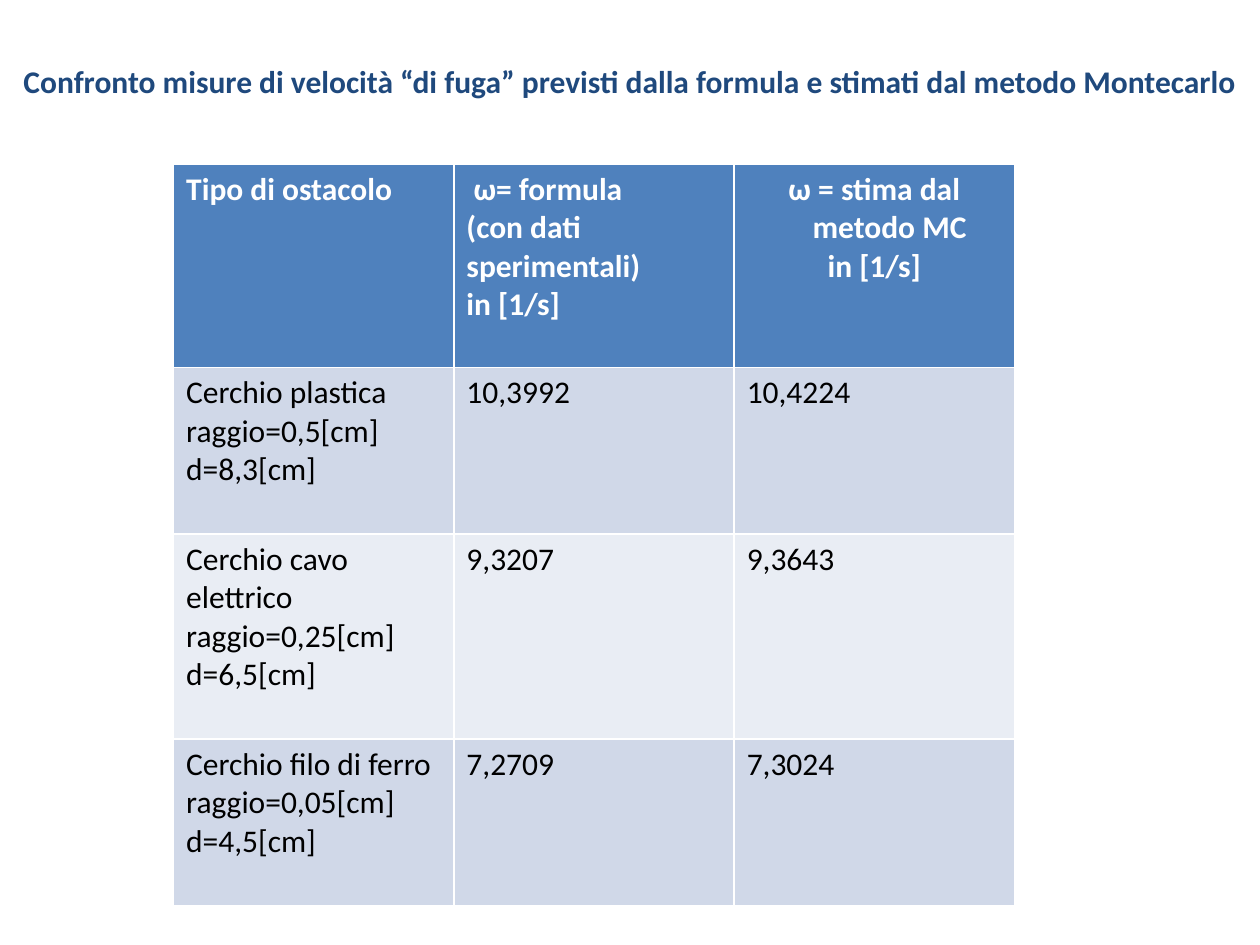
from pptx import Presentation
from pptx.dml.color import RGBColor as RGB
from pptx.enum.text import MSO_ANCHOR as Anchor, MSO_AUTO_SIZE as Fit, PP_ALIGN as Align
from pptx.util import Cm, Pt

hues = {"title": "1F497D", "head": "4F81BD", "odd": "D0D8E8",
        "even": "E9EDF4", "light": "FFFFFF", "dark": "000000"}


def style(para, hue, bold):
    font = para.font
    font.name, font.size, font.bold = "Calibri", Pt(18), bold
    font.color.rgb = RGB.from_string(hues[hue])


deck = Presentation()
deck.slide_width, deck.slide_height = Cm(25.4), Cm(19.05)
slide = deck.slides.add_slide(deck.slide_layouts[5])

title = slide.shapes.title
title.left, title.top, title.width, title.height = Cm(0), Cm(1.12), Cm(25.4), Cm(1.03)
frame = title.text_frame
frame.text = "Confronto misure di velocità “di fuga” previsti dalla formula e stimati dal metodo Montecarlo"
frame.auto_size, frame.vertical_anchor = Fit.NONE, Anchor.MIDDLE
frame.paragraphs[0].alignment = Align.CENTER
style(frame.paragraphs[0], "title", True)

rows = [
    ["Tipo di ostacolo",
     " ω= formula\n(con dati sperimentali)\nin [1/s]",
     "ω = stima dal metodo MC \nin [1/s]"],
    ["Cerchio plastica\nraggio=0,5[cm]\nd=8,3[cm]", "10,3992", "10,4224"],
    ["Cerchio cavo elettrico\nraggio=0,25[cm]\nd=6,5[cm]", "9,3207", "9,3643"],
    ["Cerchio filo di ferro\nraggio=0,05[cm]\nd=4,5[cm]", "7,2709", "7,3024"],
]
highs = [4.1, 3.36, 4.13, 3.36]

table = slide.shapes.add_table(len(rows), 3, Cm(3.5), Cm(3.31),
                               Cm(16.94), Cm(sum(highs))).table
for col in table.columns:
    col.width = Cm(5.65)

for r, (texts, high) in enumerate(zip(rows, highs)):
    table.rows[r].height = Cm(high)
    band = "head" if r == 0 else "odd" if r % 2 else "even"
    for c, text in enumerate(texts):
        cell = table.cell(r, c)
        cell.text = text
        cell.fill.solid()
        cell.fill.fore_color.rgb = RGB.from_string(hues[band])
        for para in cell.text_frame.paragraphs:
            style(para, "dark" if r else "light", r == 0)

for para in table.cell(0, 2).text_frame.paragraphs:
    para.alignment = Align.CENTER
    props = para._p.get_or_add_pPr()
    props.set("marL", str(Cm(0.76)))
    props.set("indent", str(-Cm(0.76)))

deck.save("out.pptx")
